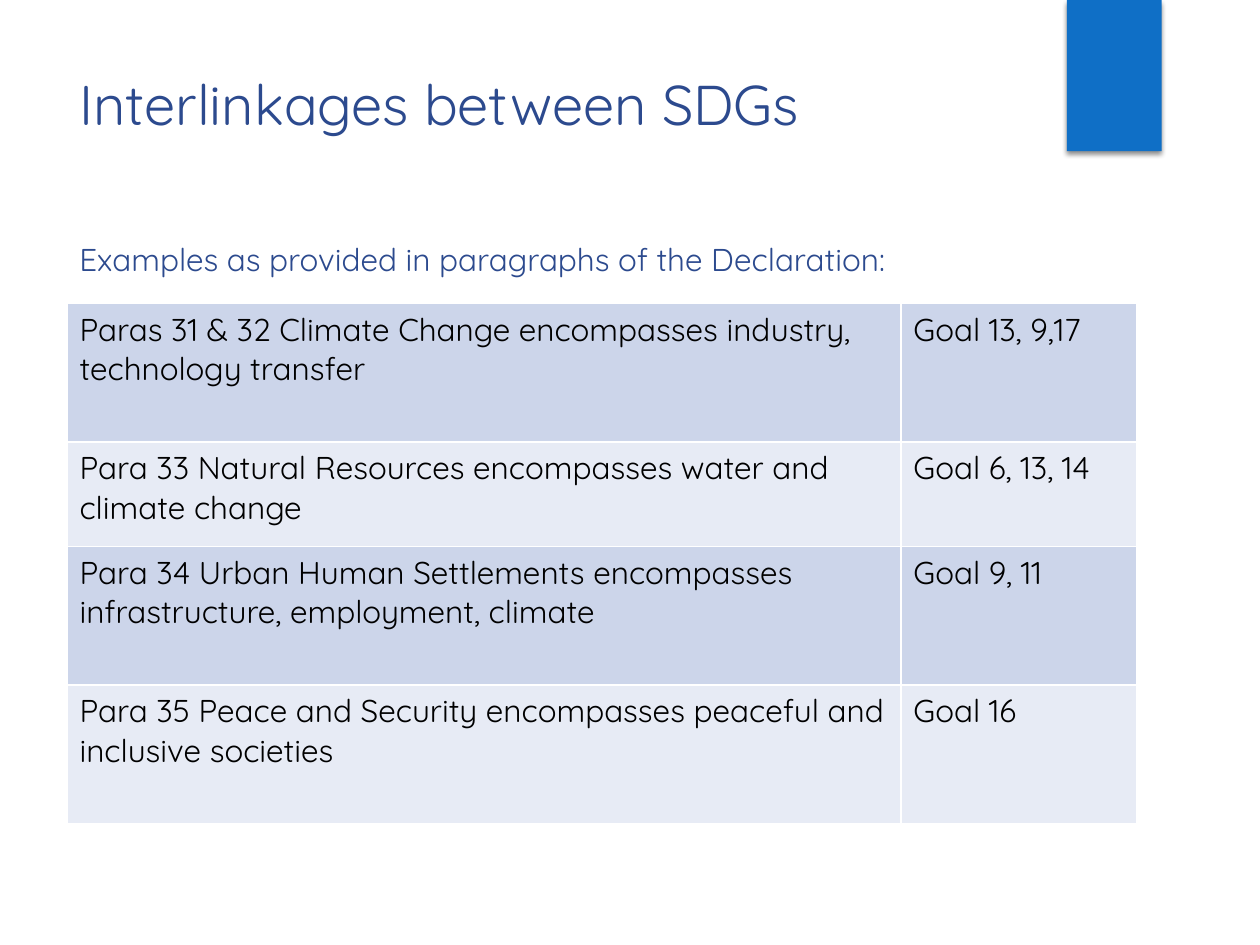
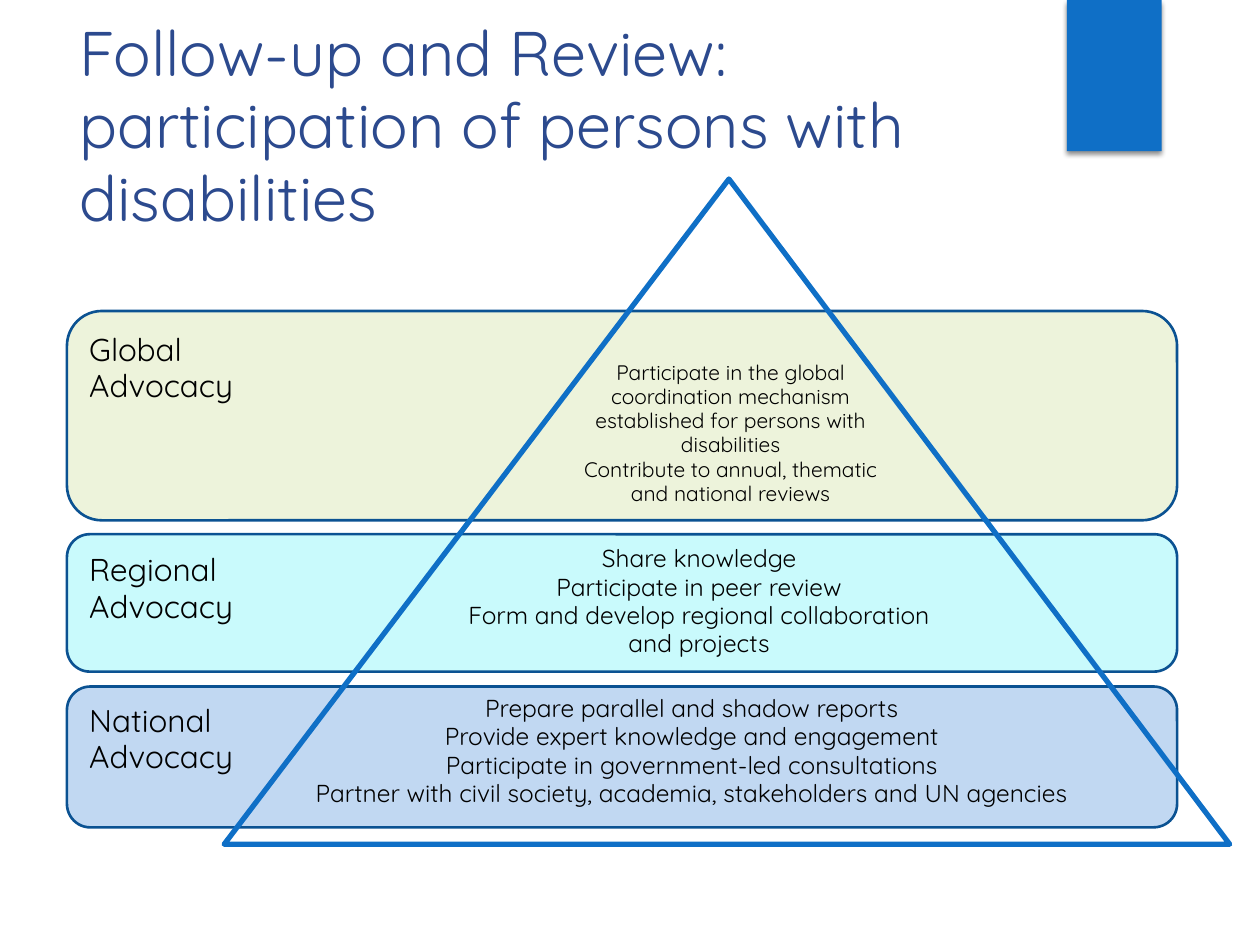
from lxml import etree
from pptx import Presentation
from pptx.dml.color import RGBColor
from pptx.enum.shapes import MSO_SHAPE as Shape
from pptx.enum.text import MSO_ANCHOR as Anchor, PP_ALIGN as Align
from pptx.oxml import parse_xml
from pptx.oxml.ns import nsdecls, qn
from pptx.util import Cm, Pt

FONT = "Quicksand"
BLUE, NAVY, EDGE, BLACK, WHITE = "0F6FC6", "2C4A8E", "0B5292", "000000", "FFFFFF"
LEFT = 1.35
color = RGBColor.from_string


def write(frame, lines, size, ink=BLACK, align=Align.LEFT, spacing=1.0):
    """Fill a text frame with one paragraph per line."""
    frame.word_wrap = True
    for number, line in enumerate(lines):
        paragraph = frame.paragraphs[0] if number == 0 else frame.add_paragraph()
        paragraph.text = line
        paragraph.alignment = align
        paragraph.line_spacing = spacing
        for key, value in {"name": FONT, "size": Pt(size)}.items():
            setattr(paragraph.font, key, value)
        paragraph.font.color.rgb = color(ink)


def add_outline(slide, kind, box, edge, width, fill=None):
    """Draw a preset shape, hollow when it has no fill."""
    shape = slide.shapes.add_shape(kind, *map(Cm, box))
    shape.shadow.inherit = False
    if fill:
        shape.fill.solid()
        shape.fill.fore_color.rgb = color(fill)
    else:
        shape.fill.background()
    if edge:
        shape.line.color.rgb = color(edge)
        shape.line.width = Pt(width)
    else:
        shape.line.fill.background()
    return shape


prs = Presentation()
prs.slide_width, prs.slide_height = Cm(25.4), Cm(19.05)
blank = prs.slide_layouts[6]

# Corner band and title of both slides
titles = [
    ("Interlinkages between SDGs", 32, (LEFT, 1.27, 19.6, 3.07), 1.0),
    ("Follow-up and Review: participation of persons with disabilities", 36,
     (LEFT, 0.24, 17.48, 4.67), 0.96),
]
for title, size, box, spacing in titles:
    slide = prs.slides.add_slide(blank)
    band = add_outline(slide, Shape.RECTANGLE, (21.51, 0, 1.91, 3.05), None, 0, BLUE)
    effects = band.element.spPr.find(qn("a:effectLst"))
    effects.append(parse_xml(
        f'<a:outerShdw {nsdecls("a")} blurRad="{Pt(3)}" dist="{Pt(2)}" dir="5400000" rotWithShape="0">'
        f'<a:srgbClr val="{BLACK}"><a:alpha val="45000"/></a:srgbClr></a:outerShdw>'))
    if spacing == 1.0:
        interlinkages = slide
    else:
        follow_up = slide
    heading = slide.shapes.add_textbox(*map(Cm, box))
    write(heading.text_frame, [title], size, NAVY, spacing=spacing)

# Slide 1: paragraphs of the Declaration and their goals
intro = interlinkages.shapes.add_textbox(*map(Cm, (LEFT, 4.72, 19.1, 1.02)))
write(intro.text_frame, ["Examples as provided in paragraphs of the Declaration:"], 18, NAVY)

examples = [
    ("Paras 31 & 32 Climate Change encompasses industry, technology transfer",
     "Goal 13, 9,17", 2.79),
    ("Para 33 Natural Resources encompasses water and climate change",
     "Goal 6, 13, 14", 2.11),
    ("Para 34 Urban Human Settlements encompasses infrastructure, employment, climate",
     "Goal 9, 11", 2.79),
    ("Para 35 Peace and Security encompasses peaceful and inclusive societies",
     "Goal 16", 2.79),
]
goals = interlinkages.shapes.add_table(
    len(examples), 2, *map(Cm, (LEFT, 6.12, 21.56, 10.48))).table
goals.first_row = goals.horz_banding = False
for column, width in zip(goals.columns, (16.81, 4.75)):
    column.width = Cm(width)
for row, (topic, linked_goals, height) in enumerate(examples):
    goals.rows[row].height = Cm(height)
    for column, text in enumerate((topic, linked_goals)):
        cell = goals.cell(row, column)
        write(cell.text_frame, [text], 18)
        properties = cell._tc.get_or_add_tcPr()
        for side in ("lnL", "lnR", "lnT", "lnB"):
            border = etree.SubElement(properties, qn(f"a:{side}"), w=str(Pt(1)))
            fill = etree.SubElement(border, qn("a:solidFill"))
            etree.SubElement(fill, qn("a:srgbClr"), val=WHITE)
        cell.fill.solid()
        cell.fill.fore_color.rgb = color("E7EBF5" if row % 2 else "CCD5EA")

# Slide 2: advocacy levels behind the triangle
levels = [
    ("Global Advocacy", "EDF3DB", 6.27, 4.22, 6.58),
    ("Regional Advocacy", "C9FAFC", 10.77, 2.77, 11.02),
    ("National Advocacy", "C1D8F2", 13.84, 2.84, 14.05),
]
for level, fill, top, height, label_top in levels:
    add_outline(follow_up, Shape.ROUNDED_RECTANGLE, (LEFT, top, 22.38, height), EDGE, 1.5, fill)
    label = follow_up.shapes.add_textbox(*map(Cm, (1.55, label_top, 4.24, 1.8)))
    write(label.text_frame, [level], 18, spacing=0.96)

triangle = add_outline(follow_up, Shape.ISOSCELES_TRIANGLE, (4.52, 3.61, 20.27, 13.41), BLUE, 3)
triangle.adjustments[0] = 0.502

actions = [
    ((11.3, 6.77, 6.86, 3.94), 12, Anchor.MIDDLE, [
        "Participate in the global coordination mechanism established for persons with disabilities",
        "Contribute to annual, thematic and national reviews"]),
    ((8.76, 10.87, 10.67, 2.64), 14, Anchor.TOP, [
        "Share knowledge",
        "Participate in peer review",
        "Form and develop regional collaboration and projects"]),
    ((5.49, 13.89, 16.92, 2.64), 14, Anchor.TOP, [
        "Prepare parallel and shadow reports",
        "Provide expert knowledge and engagement",
        "Participate in government-led consultations",
        "Partner with civil society, academia, stakeholders and UN agencies"]),
]
for box, size, anchor, lines in actions:
    action = follow_up.shapes.add_textbox(*map(Cm, box))
    action.text_frame.vertical_anchor = anchor
    write(action.text_frame, lines, size, align=Align.CENTER, spacing=0.96)

prs.save("out.pptx")
